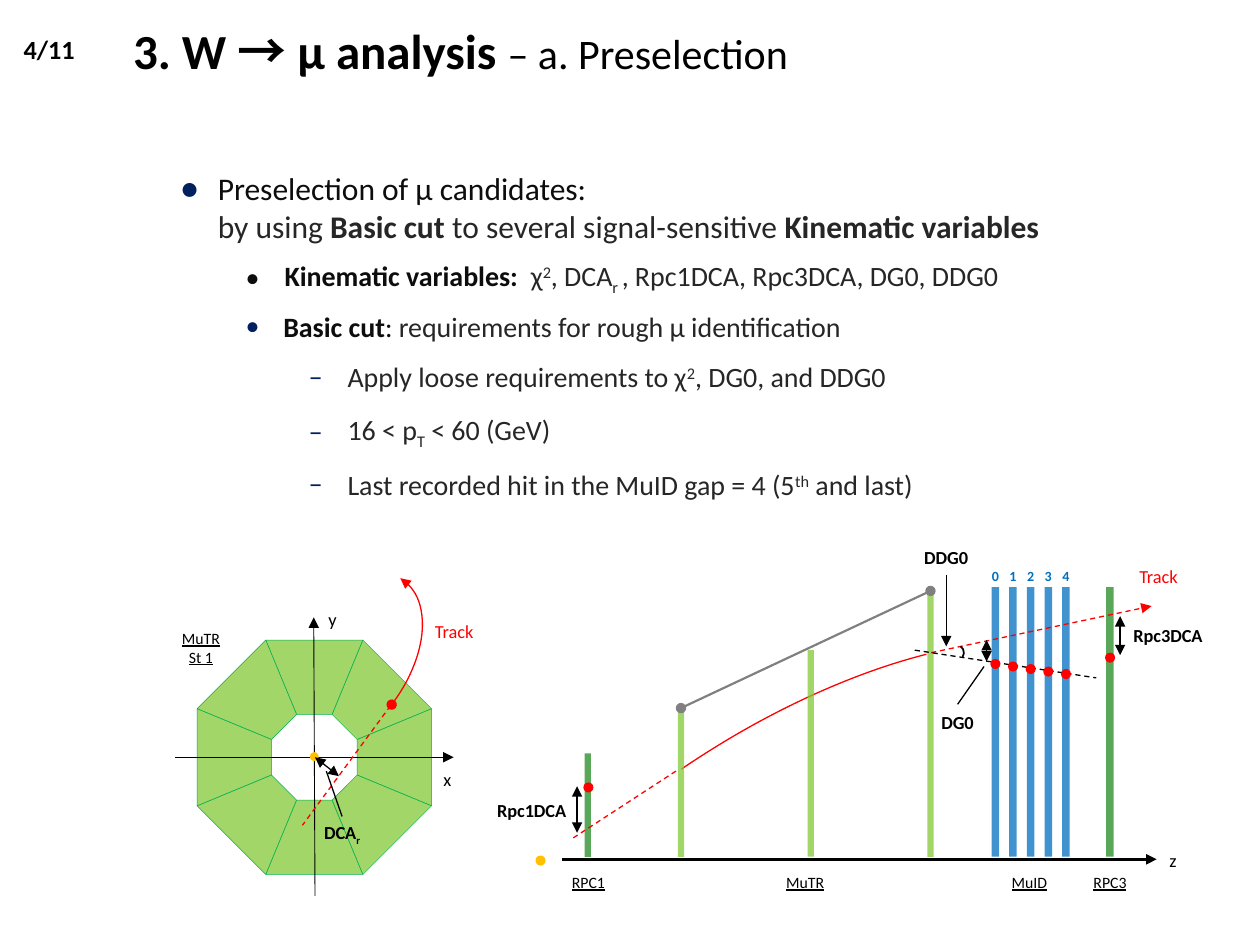
import math
import pptx
import pptx.util
import pptx.oxml
import pptx.oxml.ns
import pptx.dml.color
import pptx.enum.dml
import pptx.enum.shapes
import pptx.enum.text

RGB = pptx.dml.color.RGBColor
MSO = pptx.enum.shapes.MSO_SHAPE
ANCHOR = pptx.enum.text.MSO_ANCHOR
CENTER = pptx.enum.text.PP_ALIGN.CENTER
qn = pptx.oxml.ns.qn

BLACK, INK, GREY_INK = RGB(0, 0, 0), RGB(0x0D, 0x0D, 0x0D), RGB(0x26, 0x26, 0x26)
NAVY, BLUE, RED = RGB(0, 0x20, 0x60), RGB(0, 0x70, 0xC0), RGB(0xFF, 0, 0)
GREEN, LIME, EDGE = RGB(0x22, 0x8B, 0x22), RGB(0x83, 0xC9, 0x37), RGB(0, 0xB0, 0x50)
GOLD, GREY = RGB(0xFF, 0xC0, 0), RGB(0x80, 0x80, 0x80)

# ---- Content: a run is (text, marks, colour); b bold, u underline, ^ super, _ sub
TITLE = [("3. W ", "b", BLACK), ("→ ", "ba", BLACK), ("μ analysis ", "b", BLACK)]
SUBTITLE = ("– a. Preselection", "", BLACK)

# Paragraph: (left margin, indent, line spacing, bullet, bullet colour, bullet %, runs)
DASH_ITEM = (8.1, -3.1, 1.5, "‒", NAVY, 100)
BODY = [
    ((13.3, 11.4, 82.2, 8.6), 18, ANCHOR.TOP, [
        (3, -3, 1.5, "•", NAVY, 125, [("Preselection of μ candidates:", "", INK)]),
        (0, 3, 1, None, None, None, [
            ("by using ", "", GREY_INK), ("Basic cut", "b", GREY_INK),
            (" to several signal-sensitive ", "", GREY_INK),
            ("Kinematic variables", "b", GREY_INK)])]),
    ((18.5, 20.2, 63.2, 3.7), 16, ANCHOR.MIDDLE, [
        (3.1, -3.1, 1, "•", INK, 100, [
            ("Kinematic variables:  ", "b", INK), ("χ", "", GREY_INK),
            ("2", "^", GREY_INK), (", DCA", "", GREY_INK), ("r ", "_", GREY_INK),
            (", Rpc1DCA, Rpc3DCA, DG0, DDG0", "", GREY_INK)])]),
    ((18.5, 22.9, 63.2, 17.2), 16, ANCHOR.MIDDLE, [
        (3, -3, 1.5, "•", NAVY, 100, [
            ("Basic cut", "b", INK), (": ", "", INK),
            ("requirements for rough μ identification", "", GREY_INK)]),
        (*DASH_ITEM, [("Apply loose requirements to χ", "", GREY_INK),
                      ("2", "^", GREY_INK), (", DG0, and DDG0", "", GREY_INK)]),
        (*DASH_ITEM, [("16 < p", "", GREY_INK), ("T", "_", GREY_INK),
                      (" < 60 (GeV)", "", GREY_INK)]),
        (*DASH_ITEM, [("Last recorded hit in the MuID gap = 4 (5", "", GREY_INK),
                      ("th", "^", GREY_INK), (" and last)", "", GREY_INK)])]),
]

# Labels: text, centre column, centre row, size, marks, colour
LABELS = [
    ("RPC1", 46.7, 70, 9, "u", BLACK), ("MuTR", 63.9, 70, 9, "u", BLACK),
    ("MuID", 81.7, 70, 9, "u", BLACK), ("RPC3", 88.1, 70, 9, "u", BLACK),
    ("Track", 91.95, 45.7, 10.5, "", RED), ("Track", 36.05, 50.1, 10.5, "", RED),
    ("x", 35.5, 61.8, 10.5, "", BLACK), ("y", 26.4, 49.1, 10.5, "", BLACK),
    ("z", 93.1, 68.3, 10.5, "", BLACK),
    ("Rpc3DCA", 92.7, 50.4, 10.5, "b", BLACK),
    ("Rpc1DCA", 42.2, 64.3, 10.5, "b", BLACK),
]

# Detector planes standing on the z axis: left, top, width, colour
BASE = 68
RPCS = [(46.4, 59.8, 0.5, GREEN), (87.8, 46.6, 0.6, GREEN)]
MUTR = [(53.8, 56.2, 0.5, LIME), (64.1, 51.6, 0.5, LIME), (73.6, 46.9, 0.5, LIME)]
GAPS, GAP_LEFT, GAP_PITCH = 5, 78.7, 1.4

# Lines: x1, y1, x2, y2, colour, points, dashed, head, tail
TRI = "triangle"
SIDE_LINES = [
    (44.6, 68.2, 91.8, 68.2, BLACK, 2, False, None, TRI),
    (45.5, 66.5, 53.8, 61.1, RED, 0.75, True, None, None),
    (73.9, 51.8, 91.4, 48.1, RED, 0.75, True, None, TRI),
    (72.6, 51.6, 87, 53.8, BLACK, 0.75, True, None, None),
    (78.3, 50.8, 78.3, 52.5, BLACK, 1, False, TRI, TRI),
    (88.9, 48.9, 88.9, 52, BLACK, 1, False, TRI, TRI),
    (45.8, 62.4, 45.8, 66.1, BLACK, 1, False, TRI, TRI),
]
FRONT_LINES = [
    (13.9, 60.1, 36, 60.1, BLACK, 0.5, False, None, TRI),
    (25, 71.1, 24.9, 49, BLACK, 0.5, False, None, TRI),
    (31, 56, 24, 65.5, RED, 0.75, True, None, None),
    (26.9, 61.6, 25, 60.1, BLACK, 0.75, False, TRI, TRI),
]
RING_X, RING_Y, RING_R = 24.95, 60.1, 6.35

prs = pptx.Presentation()
prs.slide_width, prs.slide_height = pptx.util.Inches(10), pptx.util.Inches(7.5)
s = prs.slides.add_slide(prs.slide_layouts[6])
CELL = prs.slide_width / 100  # square grid: 100 columns, 75 rows


def cells(*values):
    return [round(v * CELL) for v in values]


def add_runs(p, runs, size):
    for text, marks, color in runs:
        r = p.add_run()
        r.text = text
        r.font.size, r.font.bold = pptx.util.Pt(size), "b" in marks
        r.font.underline = "u" in marks
        r.font.color.rgb = color
        r.font.name = "Noto Sans CJK KR" if "a" in marks else "Calibri"
        rpr = r._r.get_or_add_rPr()
        if "a" in marks:
            pptx.oxml.ns
            ea = rpr.makeelement(qn("a:ea"), {"typeface": r.font.name})
            rpr.append(ea)
        if "^" in marks or "_" in marks:
            rpr.set("baseline", "30000" if "^" in marks else "-25000")


def text_box(box, anchor, inset=(0, 0), wrap=True):
    sp = s.shapes.add_textbox(*cells(*box))
    tf = sp.text_frame
    tf.word_wrap, tf.vertical_anchor = wrap, anchor
    tf.margin_left, tf.margin_top = cells(*inset)
    tf.margin_right, tf.margin_bottom = cells(*inset)
    return sp


def label(cx, cy, size, *lines, spacing=1):
    sp = text_box((cx - 3, cy - 1.4, 6, 2.8), ANCHOR.MIDDLE, wrap=False)
    for i, runs in enumerate(lines):
        p = sp.text_frame.add_paragraph() if i else sp.text_frame.paragraphs[0]
        p.alignment = CENTER
        p.line_spacing = 1 if i else spacing
        add_runs(p, runs, size)
    return sp


def style_line(sp, color, points, dashed=False, head=None, tail=None):
    sp.line.color.rgb, sp.line.width = color, pptx.util.Pt(points)
    if dashed:
        sp.line.dash_style = pptx.enum.dml.MSO_LINE.DASH
    ln = sp.line._get_or_add_ln()
    for tag, end in (("a:headEnd", head), ("a:tailEnd", tail)):
        if end:
            ln.append(ln.makeelement(qn(tag), {"type": end}))


def line(x1, y1, x2, y2, *style):
    c = s.shapes.add_connector(pptx.enum.shapes.MSO_CONNECTOR.STRAIGHT,
                               *cells(x1, y1, x2, y2))
    style_line(c, *style)
    sppr = c._element.spPr
    sppr.append(sppr.makeelement(qn("a:effectLst"), {}))
    return c


def shape(kind, box, fill=None, alpha=None, rotation=0, adj=()):
    sp = s.shapes.add_shape(kind, *cells(*box))
    sp.shadow.inherit = False
    sp.rotation = rotation
    for i, value in enumerate(adj):
        sp.adjustments[i] = value
    sp.line.fill.background()
    if fill is None:
        sp.fill.background()
    else:
        sp.fill.solid()
        sp.fill.fore_color.rgb = fill
    if alpha:
        clr = sp._element.spPr.find(qn("a:solidFill"))[0]
        clr.append(clr.makeelement(qn("a:alpha"), {"val": str(alpha * 1000)}))
    return sp


def plane(left, top, width, color):
    return shape(MSO.RECTANGLE, (left, top, width, BASE - top), color, 75)


def dot(x, y, color=RED, d=0.8):
    shape(MSO.OVAL, (x, y, d, d), color)


def arc(box, rotation, adj, *style):
    style_line(shape(MSO.ARC, box, rotation=rotation, adj=adj), *style)


# ---- Side view: planes, track and z axis
for i in range(GAPS):
    x = GAP_LEFT + i * GAP_PITCH
    plane(x, 46.6, 0.6, BLUE)
    label(x + 0.3, 45.7, 8, [(str(i), "b", BLUE)])
arc((34.6, 57.1, 58.3, 24), 329, (150.5, 198.4), RED, 0.75)
for rpc in RPCS:
    plane(*rpc)
stations = [plane(*station) for station in MUTR]
chord = line(54.1, 56.2, 73.8, 46.9, GREY, 1.25, False, "oval", "oval")
chord.begin_connect(stations[0], 0)
chord.end_connect(stations[-1], 0)
for spec_line in SIDE_LINES:
    line(*spec_line)
for i in range(GAPS):
    dot(GAP_LEFT - 0.1 + i * GAP_PITCH, 52.3 + 0.2 * i)
dot(87.7, 51.8)
dot(46.3, 62.1)
dot(42.5, 67.9, GOLD)
arc((75.3, 51.2, 1.2, 1.2), 34.3, (162, 0.14), BLACK, 1)

# ---- Front view: octagonal ring, axes and track
for angle in range(0, 360, 45):
    a = math.radians(angle)
    cx, cy = RING_X - RING_R * math.sin(a), RING_Y + RING_R * math.cos(a)
    sp = shape(MSO.TRAPEZOID, (cx - 3.85, cy - 2.95, 7.7, 5.9), LIME, 75, angle, (0.415,))
    style_line(sp, EDGE, 0.25)
for spec_line in FRONT_LINES[:2]:
    line(*spec_line)
dot(24.6, 59.7, GOLD, 0.7)
for spec_line in FRONT_LINES[2:]:
    line(*spec_line)
arc((21, 44.1, 10.9, 17.8), 39.9, (160.16, 211.42), RED, 0.75, False, TRI, "oval")

# ---- Labels and their leaders
for text, cx, cy, size, marks, color in LABELS:
    label(cx, cy, size, [(text, marks, color)])
label(15.95, 51, 9, [("MuTR", "u", BLACK)], [("St 1", "u", BLACK)], spacing=1.5)
dca = label(27.15, 66.2, 10.5, [("DCA", "b", BLACK), ("r", "b_", BLACK)])
ddg0 = label(75.1, 44.2, 10.5, [("DDG0", "b", BLACK)])
dg0 = label(76, 57.3, 10.5, [("DG0", "b", BLACK)])
line(25.9, 61.2, 27.1, 64.8, BLACK, 0.75).end_connect(dca, 0)
line(75.1, 45.6, 75.1, 51.3, BLACK, 0.75, False, None, TRI).begin_connect(ddg0, 2)
line(76, 55.9, 78.1, 52.9, BLACK, 0.75).begin_connect(dg0, 0)

# ---- Page number and title
p = text_box((0, 0, 7.8, 7.8), ANCHOR.MIDDLE).text_frame.paragraphs[0]
p.alignment = CENTER
add_runs(p, [("4/11", "b", BLACK)], 15)
p = text_box((7.8, 0, 92.2, 7.9), ANCHOR.MIDDLE, (2.76, 0.5)).text_frame.paragraphs[0]
add_runs(p, TITLE, 28)
add_runs(p, [SUBTITLE], 24)

# ---- Body text
for box, size, anchor, paragraphs in BODY:
    tf = text_box(box, anchor, (1, 0.5)).text_frame
    for i, (margin, indent, spacing, bullet, color, percent, runs) in enumerate(paragraphs):
        p = tf.add_paragraph() if i else tf.paragraphs[0]
        p.line_spacing = spacing
        ppr = p._p.get_or_add_pPr()
        ppr.set("marL", str(cells(margin)[0]))
        ppr.set("indent", str(cells(indent)[0]))
        if bullet:
            clr = ppr.makeelement(qn("a:buClr"), {})
            clr.append(clr.makeelement(qn("a:srgbClr"), {"val": str(color)}))
            ppr.append(clr)
            for tag, attrs in (("a:buSzPct", {"val": str(percent * 1000)}),
                               ("a:buFont", {"typeface": "Calibri"}),
                               ("a:buChar", {"char": bullet})):
                ppr.append(ppr.makeelement(qn(tag), attrs))
        add_runs(p, runs, size)

prs.save("out.pptx")
